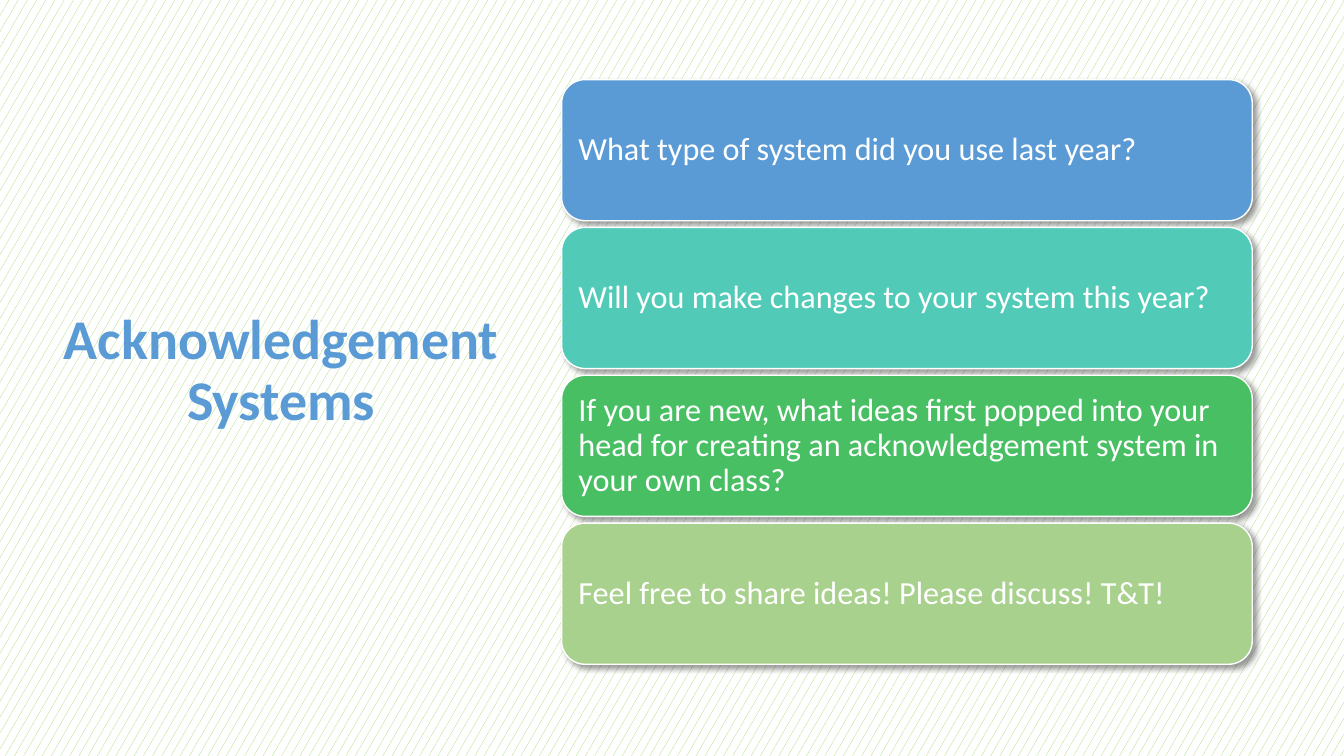
"""Build the Acknowledgement Systems discussion slide."""
from lxml import etree
from pptx import Presentation
from pptx.dml.color import RGBColor
from pptx.enum.dml import MSO_PATTERN
from pptx.enum.shapes import MSO_SHAPE
from pptx.enum.text import MSO_ANCHOR, PP_ALIGN
from pptx.oxml import parse_xml
from pptx.oxml.ns import qn
from pptx.util import Inches, Pt

CONFETTI = MSO_PATTERN.SMALL_CONFETTI
ROUNDED = MSO_SHAPE.ROUNDED_RECTANGLE
MIDDLE = MSO_ANCHOR.MIDDLE
LEFT, CENTER = PP_ALIGN.LEFT, PP_ALIGN.CENTER

FONT = "Calibri"
WHITE = "FFFFFF"
BLUE = "5B9BD5"
QUESTIONS = [
    ("What type of system did you use last year?", BLUE),
    ("Will you make changes to your system this year?", "52CAB8"),
    ("If you are new, what ideas first popped into your head for creating "
     "an acknowledgement system in your own class?", "49BF64"),
    ("Feel free to share ideas! Please discuss! T&T!", "A9D18E"),
]
CARD_LEFT, CARD_WIDTH, CARD_HEIGHT = 5.57, 6.85, 1.4
FIRST_TOP, LAST_TOP = 0.79, 5.19
SHADOW = (
    '<a:outerShdw xmlns:a="http://schemas.openxmlformats.org/drawingml/2006/main"'
    ' blurRad="50800" dist="38100" dir="2700000" algn="tl" rotWithShape="0">'
    '<a:srgbClr val="000000"><a:alpha val="40000"/></a:srgbClr></a:outerShdw>'
)


def color(hex_value):
    """Turn a hex string into a colour."""
    return RGBColor.from_string(hex_value)


def write(shape, text, size, hex_value, align, inset, bold=False):
    """Put one vertically centred paragraph into a shape."""
    frame = shape.text_frame
    frame.text = text
    frame.word_wrap = True
    frame.vertical_anchor = MIDDLE
    frame.margin_left = frame.margin_right = Inches(inset)
    paragraph = frame.paragraphs[0]
    paragraph.alignment = align
    paragraph.line_spacing = 0.9
    font = paragraph.runs[0].font
    font.name = FONT
    font.size = Pt(size)
    font.bold = bold
    font.color.rgb = color(hex_value)


def paint_background(slide):
    """Fill the slide with a green confetti pattern on white."""
    fill = slide.background.fill
    fill.patterned()
    fill.pattern = CONFETTI
    fill.fore_color.rgb = color("92D050")
    fill.back_color.rgb = color(WHITE)


def add_title(slide, text):
    """Add the heading at the left."""
    title = slide.shapes.add_textbox(
        Inches(0.51), Inches(0.68), Inches(4.56), Inches(6.02))
    write(title, text, 40, BLUE, CENTER, 0.1, bold=True)


def add_card(slide, top, question, fill):
    """Add one rounded question card with a soft shadow."""
    card = slide.shapes.add_shape(
        ROUNDED, Inches(CARD_LEFT), Inches(top),
        Inches(CARD_WIDTH), Inches(CARD_HEIGHT))
    card.fill.solid()
    card.fill.fore_color.rgb = color(fill)
    card.line.color.rgb = color(WHITE)
    card.line.width = Pt(1)
    card.shadow.inherit = False
    effects = card.element.spPr.find(qn("a:effectLst"))
    effects.append(etree.fromstring(SHADOW))
    write(card, question, 23, WHITE, LEFT, 0.1)


def main():
    """Build and save the slide."""
    deck = Presentation()
    deck.slide_width, deck.slide_height = Inches(13.33), Inches(7.5)
    slide = deck.slides.add_slide(deck.slide_layouts[6])
    paint_background(slide)
    add_title(slide, "Acknowledgement Systems")
    pitch = (LAST_TOP - FIRST_TOP) / (len(QUESTIONS) - 1)
    for row, (question, fill) in enumerate(QUESTIONS):
        add_card(slide, FIRST_TOP + row * pitch, question, fill)
    deck.save("out.pptx")


if __name__ == "__main__":
    main()
